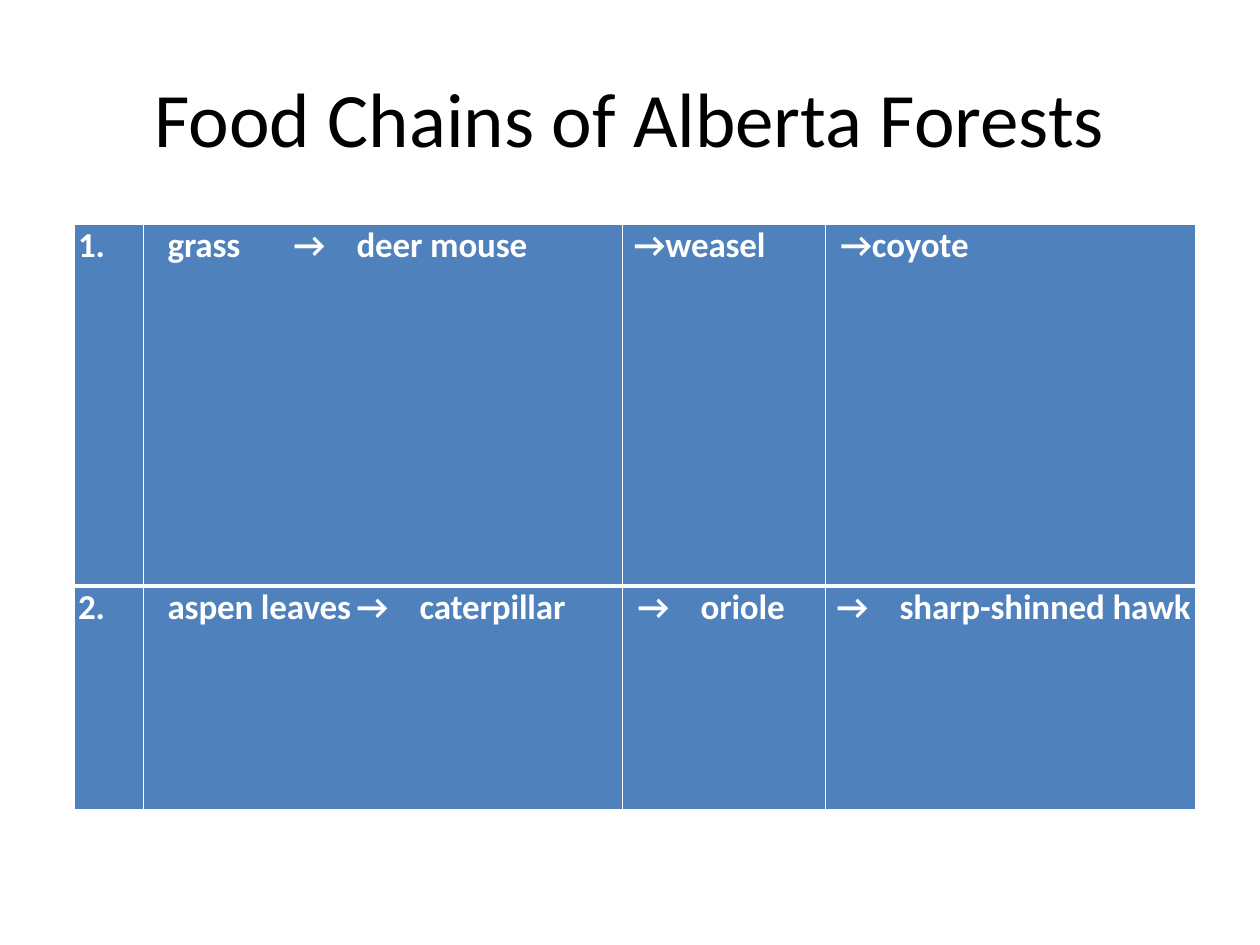
from dataclasses import dataclass

from lxml.etree import SubElement
from pptx import Presentation
from pptx.dml.color import RGBColor
from pptx.enum.text import MSO_ANCHOR, PP_ALIGN
from pptx.oxml.ns import qn
from pptx.table import _Cell as Cell
from pptx.text.text import TextFrame
from pptx.util import Inches, Pt

COLORS = {"title": "000000", "cell": "4F81BD", "light": "FFFFFF"}
FONT = "Calibri"
COLUMN_WIDTHS = (0.55, 3.8, 1.61, 2.94)


@dataclass(frozen=True)
class Link:
    text: str
    indent: float
    tabs: tuple[float, ...] = ()


@dataclass(frozen=True)
class FoodChain:
    height: float
    space_before: float
    top_line: float
    bottom_line: float
    links: tuple[Link, ...]


CHAINS = (
    FoodChain(2.87, 3.6, 1, 3, (
        Link("1.", 0.03),
        Link("grass\t→\tdeer mouse", 0.19, (0.74, 1.11)),
        Link("→weasel", 0.09),
        Link("→coyote", 0.12),
    )),
    FoodChain(1.78, 1.1, 3, 1, (
        Link("2.", 0.03),
        Link("aspen leaves\t→\tcaterpillar", 0.19, (1.6, 1.97)),
        Link("→\toriole", 0.12, (0.49,)),
        Link("→\tsharp-shinned hawk", 0.09, (0.46,)),
    )),
)


def write(frame: TextFrame, text: str, *, size: float, color: str,
          bold: bool = False, align: PP_ALIGN = PP_ALIGN.LEFT,
          space_before: float = 0, indent: float = 0,
          tabs: tuple[float, ...] = (), spacing: int = 0) -> None:
    paragraph = frame.paragraphs[0]
    paragraph.alignment = align
    paragraph.space_before = Pt(space_before)
    run = paragraph.add_run()
    run.text = text
    run.font.name = FONT
    run.font.size = Pt(size)
    run.font.bold = bold
    run.font.color.rgb = RGBColor.from_string(color)
    run._r.get_or_add_rPr().set("spc", str(spacing))
    properties = paragraph._p.get_or_add_pPr()
    properties.set("marL", str(Inches(indent)))
    properties.set("indent", "0")
    if tabs:
        tab_list = SubElement(properties, qn("a:tabLst"))
        for position in tabs:
            SubElement(tab_list, qn("a:tab"), pos=str(Inches(position)), algn="l")


def draw_borders(cell: Cell, top: float, bottom: float) -> None:
    properties = cell._tc.get_or_add_tcPr()
    for side, width in (("L", 1), ("R", 1), ("T", top), ("B", bottom)):
        line = SubElement(properties, qn(f"a:ln{side}"), w=str(Pt(width)))
        fill = SubElement(line, qn("a:solidFill"))
        SubElement(fill, qn("a:srgbClr"), val=COLORS["light"])


def draw_link(cell: Cell, link: Link, chain: FoodChain) -> None:
    draw_borders(cell, chain.top_line, chain.bottom_line)
    cell.fill.solid()
    cell.fill.fore_color.rgb = RGBColor.from_string(COLORS["cell"])
    cell.margin_left = cell.margin_right = Inches(0)
    cell.margin_top = cell.margin_bottom = Inches(0)
    write(cell.text_frame, link.text, size=20, color=COLORS["light"], bold=True,
          space_before=chain.space_before, indent=link.indent, tabs=link.tabs,
          spacing=-10)


def main() -> None:
    presentation = Presentation()
    presentation.slide_width = Inches(10)
    presentation.slide_height = Inches(7.5)
    slide = presentation.slides.add_slide(presentation.slide_layouts[6])

    title = slide.shapes.add_textbox(Inches(0.5), Inches(0.3), Inches(9), Inches(1.25)).text_frame
    title.word_wrap = True
    title.vertical_anchor = MSO_ANCHOR.MIDDLE
    write(title, "Food Chains of Alberta Forests", size=44, color=COLORS["title"],
          align=PP_ALIGN.CENTER)

    chain_table = slide.shapes.add_table(
        len(CHAINS), len(COLUMN_WIDTHS), Inches(0.59), Inches(1.78),
        Inches(sum(COLUMN_WIDTHS)), Inches(sum(chain.height for chain in CHAINS))).table
    for column, width in zip(chain_table.columns, COLUMN_WIDTHS):
        column.width = Inches(width)
    for row, chain in zip(chain_table.rows, CHAINS):
        row.height = Inches(chain.height)
        for cell, link in zip(row.cells, chain.links):
            draw_link(cell, link, chain)

    presentation.save("out.pptx")


if __name__ == "__main__":
    main()
